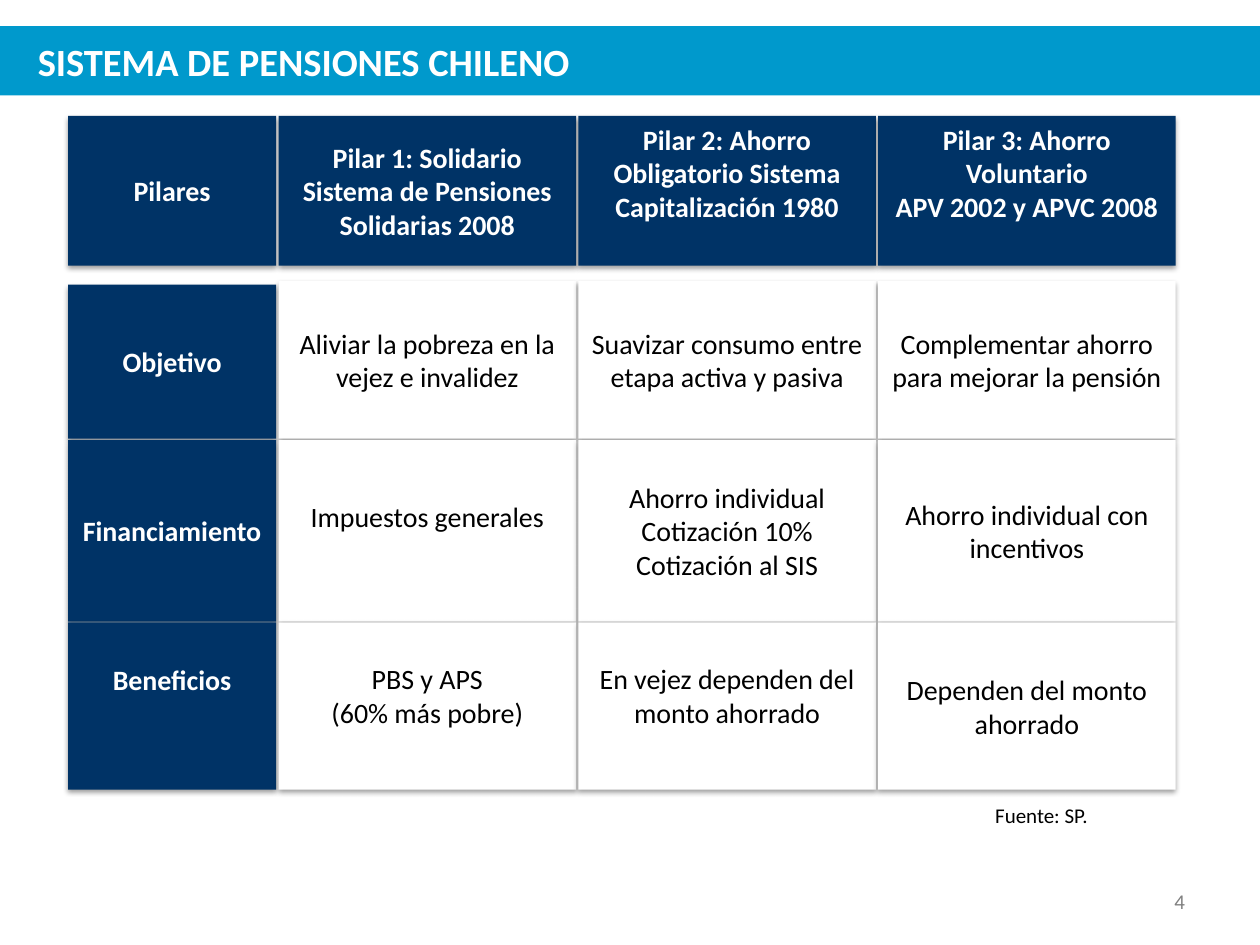
from lxml import etree
from pptx import Presentation
from pptx.dml.color import RGBColor
from pptx.enum.shapes import MSO_SHAPE
from pptx.enum.text import MSO_ANCHOR, PP_ALIGN
from pptx.oxml.ns import qn
from pptx.util import Pt

COLORS = {"band": "0099CC", "header": "003366", "white": "FFFFFF",
          "black": "000000", "gray": "808080"}
TITLE = "SISTEMA DE PENSIONES CHILENO"
SOURCE = "Fuente: SP."
PAGE_NUMBER = "4"

# Each cell is a list of paragraphs; the first row and column are headings
GRID = [
    [["Pilares"],
     ["Pilar 1: Solidario", "Sistema de Pensiones Solidarias 2008"],
     ["Pilar 2: Ahorro Obligatorio Sistema Capitalización 1980"],
     ["Pilar 3: Ahorro Voluntario", "APV 2002 y APVC 2008"]],
    [["Objetivo"],
     ["Aliviar la pobreza en la vejez e invalidez"],
     ["Suavizar consumo entre etapa activa y pasiva"],
     ["Complementar ahorro para mejorar la pensión"]],
    [["Financiamiento"],
     ["Impuestos generales"],
     ["Ahorro individual", "Cotización 10%", "Cotización al SIS"],
     ["Ahorro individual con incentivos"]],
    [["Beneficios"],
     ["PBS y APS", "(60% más pobre)"],
     ["En vejez dependen del monto ahorrado"],
     ["Dependen del monto ahorrado"]],
]
LEFT, COLUMN_GAP = 38.9, 1.3
COLUMN_WIDTHS = [119, 170, 170, 170]
ROWS = [(66.2, 85.7), (160.6, 90), (251.3, 103.9), (355.7, 95.5)]  # top, height
LABEL_DROP = {1: 2.1}  # the first row label starts a little lower

# Text frame settings of the cells that are not plainly centred
CELL_FRAMES = {
    (0, 2): {"vertical_anchor": MSO_ANCHOR.TOP},
    (0, 3): {"vertical_anchor": MSO_ANCHOR.TOP},
    (2, 1): {"margin_bottom": Pt(20)},
    (3, 0): {"vertical_anchor": MSO_ANCHOR.TOP, "margin_top": Pt(23)},
    (3, 1): {"margin_bottom": Pt(16)},
    (3, 2): {"margin_bottom": Pt(16)},
}


def rgb(name):
    return RGBColor.from_string(COLORS[name])


def apply(target, values):
    for key, value in values.items():
        setattr(target, key, value)


def write(shape, lines, size, color, bold=False, align=PP_ALIGN.LEFT, **frame_values):
    frame = shape.text_frame
    apply(frame, {"word_wrap": True, "vertical_anchor": MSO_ANCHOR.MIDDLE, **frame_values})
    frame.text = "\n".join(lines)
    for paragraph in frame.paragraphs:
        paragraph.alignment = align
        apply(paragraph.font, {"name": "Calibri", "size": Pt(size), "bold": bold})
        paragraph.font.color.rgb = rgb(color)


def add_rectangle(slide, box, fill):
    shape = slide.shapes.add_shape(MSO_SHAPE.RECTANGLE, *map(Pt, box))
    shape.shadow.inherit = False
    shape.fill.solid()
    shape.fill.fore_color.rgb = rgb(fill)
    shape.line.fill.background()
    return shape


def add_drop_shadow(shape):
    effects = shape._element.spPr.find(qn("a:effectLst"))
    shadow = etree.SubElement(effects, qn("a:outerShdw"), blurRad=str(Pt(3.1)),
                              dist=str(Pt(1.6)), dir="5400000", rotWithShape="0")
    color = etree.SubElement(shadow, qn("a:srgbClr"), val=COLORS["black"])
    etree.SubElement(color, qn("a:alpha"), val="38000")


def add_grid(slide):
    for row, (cells, (row_top, row_height)) in enumerate(zip(GRID, ROWS)):
        left = LEFT
        for column, (lines, width) in enumerate(zip(cells, COLUMN_WIDTHS)):
            heading = row == 0 or column == 0
            drop = LABEL_DROP.get(row, 0) if column == 0 else 0
            box = (left, row_top + drop, width, row_height - drop)
            cell = add_rectangle(slide, box, "header" if heading else "white")
            add_drop_shadow(cell)
            write(cell, lines, 16, "white" if heading else "black", heading,
                  PP_ALIGN.CENTER, **CELL_FRAMES.get((row, column), {}))
            left += width + COLUMN_GAP


def main():
    prs = Presentation()
    apply(prs, {"slide_width": Pt(720), "slide_height": Pt(540)})
    slide = prs.slides.add_slide(prs.slide_layouts[5])

    # Title on its band, with the band sent to the back
    band = add_rectangle(slide, (0, 15, 720, 39.6), "band")
    slide.shapes._spTree.insert(2, band._element)
    title = slide.shapes.title
    apply(title, {"left": Pt(14.4), "top": Pt(15), "width": Pt(648), "height": Pt(39.6)})
    write(title, [TITLE], 22, "white", True)

    add_grid(slide)

    # Source and page number
    source = slide.shapes.add_textbox(Pt(561.6), Pt(455), Pt(111), Pt(21.8))
    write(source, [SOURCE], 12, "black", vertical_anchor=MSO_ANCHOR.TOP)
    page = slide.shapes.add_textbox(Pt(516.2), Pt(500.5), Pt(168), Pt(28.8))
    write(page, [PAGE_NUMBER], 12, "gray", align=PP_ALIGN.RIGHT)

    prs.save("out.pptx")


if __name__ == "__main__":
    main()
